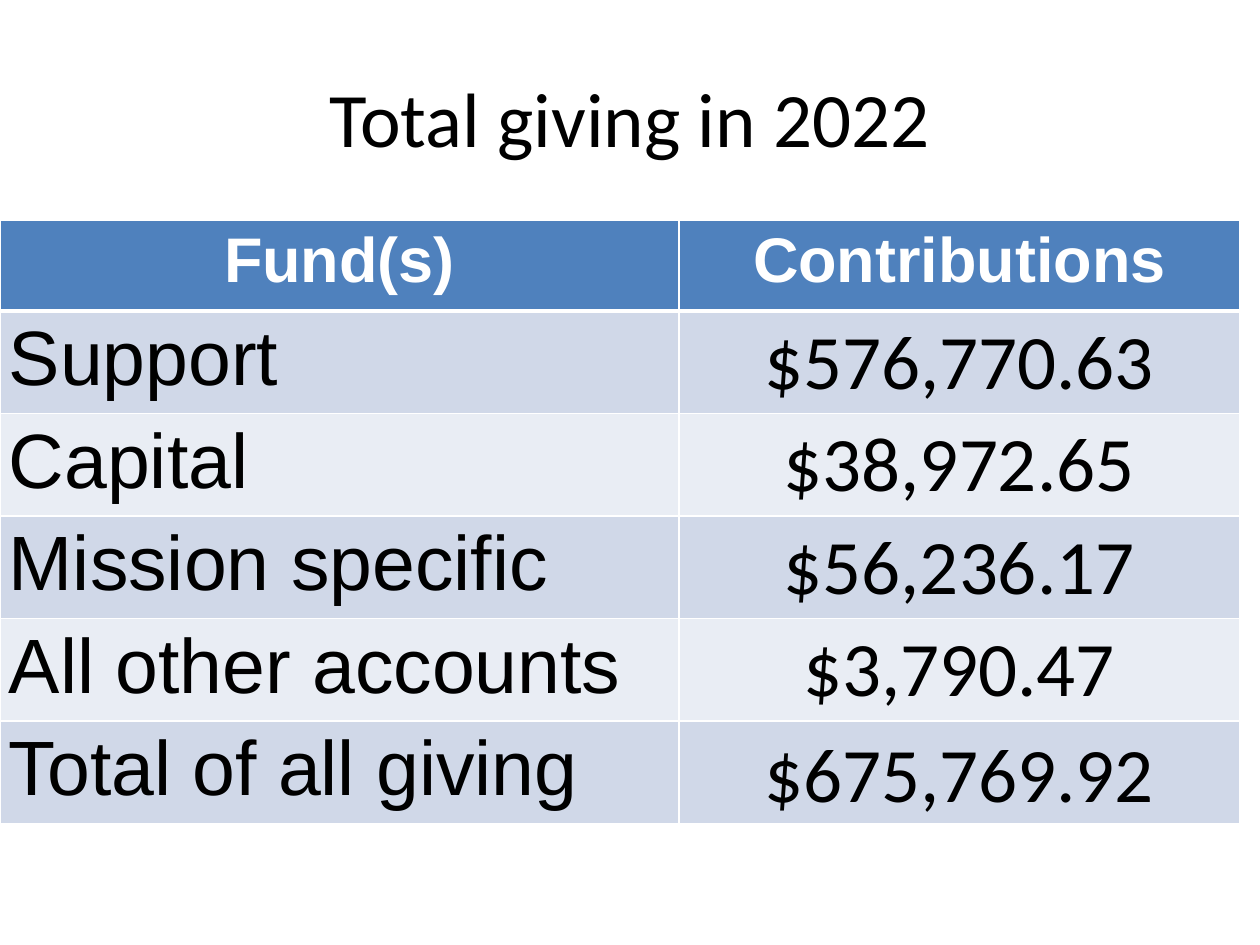
from lxml import etree
from pptx import Presentation
from pptx import util as u
from pptx.dml.color import RGBColor
from pptx.enum import text
from pptx.oxml import ns

WHITE = RGBColor(0xFF, 0xFF, 0xFF)
BLACK = RGBColor(0x00, 0x00, 0x00)
HEADER_BLUE = RGBColor(0x4F, 0x81, 0xBD)
BANDS = (RGBColor(0xD0, 0xD8, 0xE8), RGBColor(0xE9, 0xED, 0xF4))

GIVING = [
    ("Fund(s)", "Contributions"),
    ("Support", "$576,770.63"),
    ("Capital", "$38,972.65"),
    ("Mission specific", "$56,236.17"),
    ("All other accounts", "$3,790.47"),
    ("Total of all giving", "$675,769.92"),
]
COLUMN_WIDTHS = (5.39, 4.45)
ROW_HEIGHTS = (0.72, 0.76, 0.76, 0.76, 0.76, 0.73)


class GivingSlide:
    label_font = "Arial"
    number_font = "Calibri"
    header_size = 36
    body_size = 44

    def __init__(self, presentation):
        self.slide = presentation.slides.add_slide(presentation.slide_layouts[6])

    def style_text(self, paragraph, wording, font, size, color, centered=True, bold=False):
        paragraph.text = wording
        paragraph.alignment = text.PP_ALIGN.CENTER if centered else text.PP_ALIGN.LEFT
        paragraph.font.name = font
        paragraph.font.size = u.Pt(size)
        paragraph.font.bold = bold
        paragraph.font.color.rgb = color

    def title(self, wording, left, top, width, height):
        shape = self.slide.shapes.add_textbox(*map(u.Inches, (left, top, width, height)))
        frame = shape.text_frame
        frame.word_wrap = True
        frame.vertical_anchor = text.MSO_ANCHOR.MIDDLE
        self.style_text(frame.paragraphs[0], wording, self.number_font, self.body_size, BLACK)

    def borders(self, cell, top, bottom):
        properties = cell._tc.get_or_add_tcPr()
        for side, points in (("L", 1), ("R", 1), ("T", top), ("B", bottom)):
            line = etree.SubElement(properties, ns.qn(f"a:ln{side}"), w=str(u.Pt(points)))
            fill = etree.SubElement(line, ns.qn("a:solidFill"))
            etree.SubElement(fill, ns.qn("a:srgbClr"), val=str(WHITE))

    def margins(self, cell, left, top, right, bottom):
        cell.margin_left, cell.margin_top = u.Inches(left), u.Inches(top)
        cell.margin_right, cell.margin_bottom = u.Inches(right), u.Inches(bottom)

    def cell(self, cell, wording, row, column):
        header = row == 0
        self.borders(cell, 3 if row == 1 else 1, 3 if header else 1)
        cell.fill.solid()
        cell.fill.fore_color.rgb = HEADER_BLUE if header else BANDS[(row - 1) % 2]
        self.margins(cell, 0.07, 0.04, 0.07, 0.04)
        self.style_text(
            cell.text_frame.paragraphs[0],
            wording,
            self.label_font if header or column == 0 else self.number_font,
            self.header_size if header else self.body_size,
            WHITE if header else BLACK,
            centered=header or column == 1,
            bold=header,
        )

    def table(self, rows, left, top, widths, heights):
        box = (left, top, sum(widths), sum(heights))
        table = self.slide.shapes.add_table(
            len(rows), len(widths), *map(u.Inches, box)
        ).table
        for column, width in zip(table.columns, widths):
            column.width = u.Inches(width)
        for row, height in zip(table.rows, heights):
            row.height = u.Inches(height)
        for row, wordings in enumerate(rows):
            for column, wording in enumerate(wordings):
                self.cell(table.cell(row, column), wording, row, column)
        total = table.cell(len(rows) - 1, len(widths) - 1)
        total.vertical_anchor = text.MSO_ANCHOR.BOTTOM
        self.margins(total, 0.01, 0.01, 0.01, 0)


def main():
    presentation = Presentation()
    presentation.slide_width = u.Inches(10)
    presentation.slide_height = u.Inches(7.5)
    giving = GivingSlide(presentation)
    giving.title("Total giving in 2022", 0.5, 0.3, 9, 1.25)
    giving.table(GIVING, 0, 1.75, COLUMN_WIDTHS, ROW_HEIGHTS)
    presentation.save("out.pptx")


if __name__ == "__main__":
    main()
